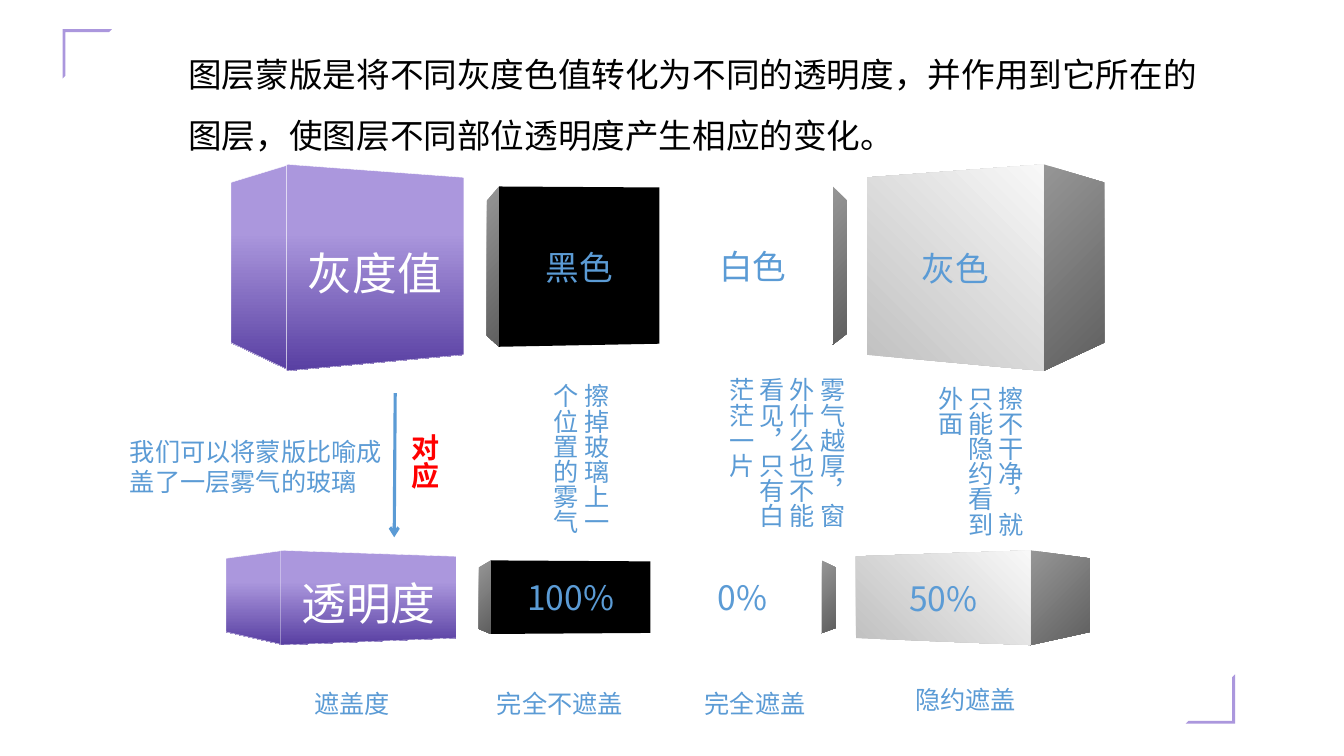
from lxml.etree import SubElement
from pptx import Presentation
from pptx.dml.color import RGBColor
from pptx.enum.shapes import MSO_CONNECTOR, MSO_SHAPE
from pptx.enum.text import MSO_ANCHOR, MSO_AUTO_SIZE, PP_ALIGN
from pptx.oxml.ns import qn
from pptx.util import Pt

PX = 9144  # EMU per px, 100 px to the inch
LILAC, BLUE, BLACK, WHITE, RED = "AB97DD", "5B9BD5", "000000", "FFFFFF", "FF0000"
# Gradients: (position, colour) of both stops, counter-clockwise angle
PURPLE = ((0.33, LILAC), (1, "583FA2"), 270)
DARK = ((0, "969696"), (1, "5F5F5F"), 315)
LIGHT = ((0, "C0C0C0"), (1, "F8F8F8"), 45)


def rgb(color):
    return RGBColor.from_string(color)


class Slide:
    """Holds the text style and the slide being drawn."""

    font = "Calibri"
    face_font = "Noto Sans CJK SC"

    def __init__(self, prs):
        self.s = prs.slides.add_slide(prs.slide_layouts[6])

    def set_text(self, tf, text, size, color, font, bold=False, align=None, spacing=None):
        tf.text = text
        for p in tf.paragraphs:
            p.alignment = align
            p.line_spacing = spacing
            for r in p.runs:
                r.font.size, r.font.bold, r.font.name = Pt(size), bold, font
                r.font.color.rgb = rgb(color)
                SubElement(r._r.get_or_add_rPr(), qn("a:ea"), typeface=font)

    def text(self, x, y, w, h, text, size=18, color=BLUE, bold=False,
             wrap=True, vertical=False):
        tf = self.s.shapes.add_textbox(x * PX, y * PX, w * PX, h * PX).text_frame
        tf.word_wrap = wrap
        tf.auto_size = MSO_AUTO_SIZE.SHAPE_TO_FIT_TEXT
        if vertical:
            tf._txBody.bodyPr.set("vert", "eaVert")
        self.set_text(tf, text, size, color, self.font, bold)

    def title(self, x, y, w, h, text):
        tf = self.s.shapes.add_textbox(x * PX, y * PX, w * PX, h * PX).text_frame
        tf.word_wrap = True
        tf.vertical_anchor = MSO_ANCHOR.MIDDLE
        self.set_text(tf, text, 24, BLACK, self.font, spacing=1.5)

    def corner(self, x, y, size, rotation=0):
        sp = self.s.shapes.add_shape(MSO_SHAPE.HALF_FRAME, x * PX, y * PX,
                                     size * PX, size * PX)
        sp.adjustments[0] = sp.adjustments[1] = 0.06
        sp.rotation = rotation
        sp.shadow.inherit = False
        sp.fill.solid()
        sp.fill.fore_color.rgb = rgb(LILAC)
        sp.line.fill.background()

    def face(self, group, points, fill, text=""):
        builder = group.shapes.build_freeform(*points[0], scale=PX)
        builder.add_line_segments(points[1:])
        sp = builder.convert_to_shape()
        sp.shadow.inherit = False
        if isinstance(fill, str):
            sp.fill.solid()
            sp.fill.fore_color.rgb = rgb(fill)
        else:
            *stops, angle = fill
            sp.fill.gradient()
            sp.fill.gradient_angle = angle
            for stop, (position, color) in zip(sp.fill.gradient_stops, stops):
                stop.position = position
                stop.color.rgb = rgb(color)
        if fill == PURPLE:
            sp.line.color.rgb = rgb(WHITE)
            sp.line.width = Pt(0.25)
        else:
            sp.line.fill.background()
        if text:
            tf = sp.text_frame
            tf.word_wrap = True
            tf.vertical_anchor = MSO_ANCHOR.MIDDLE
            size, color, spacing = (32, WHITE, 1.2) if fill == PURPLE else (24, BLUE, None)
            self.set_text(tf, text, size, color, self.face_font,
                          align=PP_ALIGN.CENTER, spacing=spacing)

    def box_row(self, left, top, x_scale, y_scale, labels):
        group = self.s.shapes.add_group_shape()

        def place(points):
            return [(round(left + (x - ROW_LEFT) * x_scale),
                     round(top + (y - ROW_TOP) * y_scale)) for x, y in points]

        for points, fill in SIDES:
            self.face(group, place(points), fill)
        for (points, fill), label in zip(FRONTS, labels):
            self.face(group, place(points), fill, label)

    def arrow(self, x1, y1, x2, y2):
        line = self.s.shapes.add_connector(MSO_CONNECTOR.STRAIGHT, x1 * PX, y1 * PX,
                                           x2 * PX, y2 * PX)
        line.line.color.rgb = rgb(BLUE)
        line.line.width = Pt(2.25)
        SubElement(line.get_or_add_ln(), qn("a:tailEnd"), type="arrow")
        SubElement(line._element.spPr, qn("a:effectLst"))


# Faces of the upper row of boxes; the lower row is a scaled version
ROW_LEFT, ROW_TOP = 229, 163
SIDES = [
    ([(229, 181), (229, 340), (288, 368), (288, 163)], PURPLE),
    ([(483, 199), (483, 333), (495, 344), (495, 185)], DARK),
    ([(840, 199), (840, 331), (826, 342), (826, 185)], DARK),
    ([(1095, 181), (1095, 340), (1035, 368), (1035, 163)], DARK),
]
FRONTS = [
    ([(1035, 163), (1035, 368), (860, 352), (860, 176)], LIGHT),
    ([(826, 341), (667, 343), (667, 184), (826, 185)], WHITE),
    ([(654, 341), (495, 344), (495, 185), (654, 186)], BLACK),
    ([(284, 163), (284, 368), (460, 352), (460, 176)], PURPLE),
]


def main():
    prs = Presentation()
    prs.slide_width, prs.slide_height = 1333 * PX, 750 * PX
    s = Slide(prs)

    # Corner marks
    s.corner(1176, 669, 49, 180)
    s.corner(62, 29, 49)

    # Title and both rows of boxes
    s.box_row(229, 163, 1, 1, ["灰色", "白色", "黑色", "灰度值"])
    s.title(177, 29, 1025, 129,
            "图层蒙版是将不同灰度色值转化为不同的透明度，并作用到它所在的图层，"
            "使图层不同部位透明度产生相应的变化。")
    s.box_row(224, 546, 0.99, 0.46, ["50%", "0%", "100%", "透明度"])

    # Explanations between the rows
    s.text(119, 428, 274, 71, "我们可以将蒙版比喻成\n盖了一层雾气的玻璃", wrap=False)
    for x, y, w, h, text in [
        (530, 371, 81, 175, "擦掉玻璃上一个位置的雾气"),
        (704, 365, 141, 175, "雾气越厚，窗外什么也不能看见，只有白茫茫一片"),
        (912, 373, 110, 181, "擦不干净，就只能隐约看到外面"),
    ]:
        s.text(x, y, w, h, text, vertical=True)

    # Degree of cover under each column
    for x, y, w, text in [
        (483, 678, 145, "完全不遮盖"),
        (689, 678, 120, "完全遮盖"),
        (898, 674, 132, "隐约遮盖"),
        (302, 678, 95, "遮盖度"),
    ]:
        s.text(x, y, w, 40, text, wrap=text == "隐约遮盖")

    # Arrow from grey value to transparency
    s.arrow(392, 390, 391, 533)
    s.text(389, 421, 54, 97, "对应", 20, RED, bold=True, vertical=True)

    prs.save("out.pptx")


if __name__ == "__main__":
    main()
